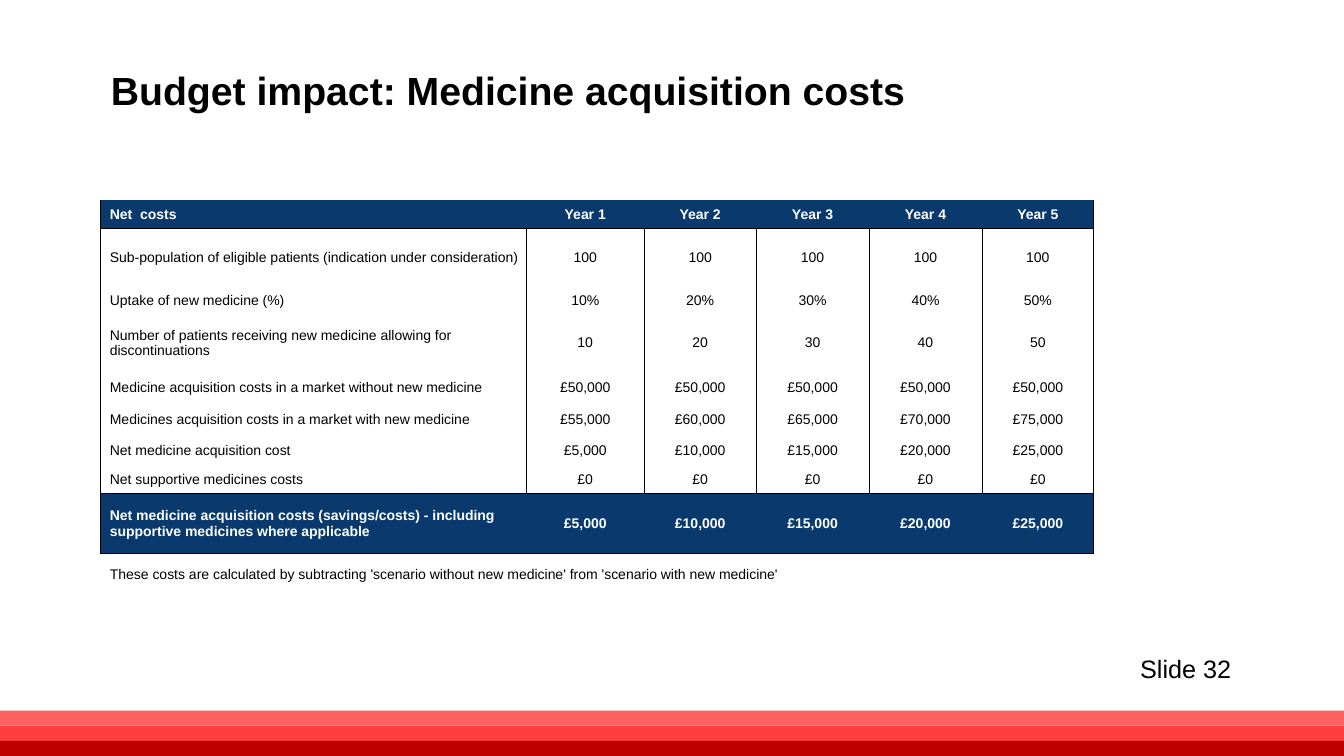
import pptx
import pptx.dml.color
import pptx.enum.text
import pptx.oxml.ns
import pptx.util
from lxml import etree
from pptx.dml.color import RGBColor
from pptx.enum.shapes import MSO_SHAPE
from pptx.enum.text import MSO_ANCHOR, MSO_AUTO_SIZE, PP_ALIGN
from pptx.util import Inches

BLACK = RGBColor(0x00, 0x00, 0x00)
WHITE = RGBColor(0xFF, 0xFF, 0xFF)
NAVY = RGBColor(0x09, 0x39, 0x6D)
BAND_COLORS = [
    RGBColor(0xFF, 0x61, 0x61),
    RGBColor(0xFF, 0x3F, 0x3F),
    RGBColor(0xC0, 0x00, 0x00),
]

COLUMN_WIDTHS = [4.22, 1.17, 1.11, 1.12, 1.12, 1.11]
ROW_HEIGHTS = [0.29, 0.56, 0.29, 0.56, 0.32, 0.32, 0.29, 0.29, 0.59, 0.29]
COSTS = [
    ["Net  costs"] + [f"Year {year}" for year in range(1, 6)],
    ["Sub-population of eligible patients (indication under consideration)"]
    + ["100"] * 5,
    ["Uptake of new medicine (%)", "10%", "20%", "30%", "40%", "50%"],
    ["Number of patients receiving new medicine allowing for discontinuations",
     "10", "20", "30", "40", "50"],
    ["Medicine acquisition costs in a market without new medicine"]
    + ["£50,000"] * 5,
    ["Medicines acquisition costs in a market with new medicine",
     "£55,000", "£60,000", "£65,000", "£70,000", "£75,000"],
    ["Net medicine acquisition cost",
     "£5,000", "£10,000", "£15,000", "£20,000", "£25,000"],
    ["Net supportive medicines costs"] + ["£0"] * 5,
    ["Net medicine acquisition costs (savings/costs) - including "
     "supportive medicines where applicable",
     "£5,000", "£10,000", "£15,000", "£20,000", "£25,000"],
]
FOOTNOTE = ("These costs are calculated by subtracting 'scenario without new "
            "medicine' from 'scenario with new medicine'")
TOTAL_ROW = len(COSTS) - 1
NOTE_ROW = len(COSTS)
LAST_COLUMN = len(COLUMN_WIDTHS) - 1


def format_text(text_frame, size, color=BLACK, bold=False, align=PP_ALIGN.LEFT):
    for paragraph in text_frame.paragraphs:
        paragraph.alignment = align
        for run in paragraph.runs:
            run.font.name = "Arial"
            run.font.size = pptx.util.Pt(size)
            run.font.bold = bold
            run.font.color.rgb = color


def add_bands(slide, left, top, width, height):
    """Stack the red bands evenly in the given box."""
    band_height = height / len(BAND_COLORS)
    for index, color in enumerate(BAND_COLORS):
        band = slide.shapes.add_shape(
            MSO_SHAPE.RECTANGLE, Inches(left), Inches(top + index * band_height),
            Inches(width), Inches(band_height))
        band.shadow.inherit = False
        band.fill.solid()
        band.fill.fore_color.rgb = color
        band.line.fill.background()


def add_title(slide, left, top, width, height):
    title = slide.shapes.title
    title.left, title.top = Inches(left), Inches(top)
    title.width, title.height = Inches(width), Inches(height)
    title.text_frame.text = "Budget impact: Medicine acquisition costs"
    title.text_frame.word_wrap = False
    title.text_frame.auto_size = MSO_AUTO_SIZE.SHAPE_TO_FIT_TEXT
    title.text_frame.vertical_anchor = MSO_ANCHOR.TOP
    format_text(title.text_frame, 28, bold=True)


def set_borders(cell, widths):
    """Draw left, right, top and bottom borders; a width of 0 hides one."""
    properties = cell._tc.get_or_add_tcPr()
    for index, (side, width) in enumerate(zip("LRTB", widths)):
        line = etree.Element(pptx.oxml.ns.qn(f"a:ln{side}"))
        if width:
            line.set("w", str(pptx.util.Pt(width)))
            fill = etree.SubElement(line, pptx.oxml.ns.qn("a:solidFill"))
            etree.SubElement(fill, pptx.oxml.ns.qn("a:srgbClr"), val=str(BLACK))
        else:
            etree.SubElement(line, pptx.oxml.ns.qn("a:noFill"))
        properties.insert(index, line)


def border_widths(row, column):
    if row == NOTE_ROW:
        return 0, 0, 1, 0
    if row in (0, TOTAL_ROW):
        return (1 if column == 0 else 0, 1 if column == LAST_COLUMN else 0,
                0.5 if row else 0, 1 if row else 0.5)
    return (1 if column == 0 else 0.5, 0.5,
            0.5 if row == 1 else 0, 0.5 if row == TOTAL_ROW - 1 else 0)


def format_cell(cell, row, column):
    highlighted = row in (0, TOTAL_ROW)
    cell.fill.solid()
    cell.fill.fore_color.rgb = NAVY if highlighted else WHITE
    cell.margin_left = Inches(0.01 if column else 0.09)
    cell.margin_right = cell.margin_top = Inches(0.01)
    cell.margin_bottom = 0
    cell.vertical_anchor = (
        MSO_ANCHOR.BOTTOM if row == NOTE_ROW else MSO_ANCHOR.MIDDLE)
    format_text(cell.text_frame, 10, WHITE if highlighted else BLACK,
                highlighted, PP_ALIGN.CENTER if column else PP_ALIGN.LEFT)
    set_borders(cell, border_widths(row, column))


def add_cost_table(slide, left, top):
    table = slide.shapes.add_table(
        len(ROW_HEIGHTS), len(COLUMN_WIDTHS), Inches(left), Inches(top),
        Inches(sum(COLUMN_WIDTHS)), Inches(sum(ROW_HEIGHTS))).table
    table.first_row = table.horz_banding = False
    for column, width in zip(table.columns, COLUMN_WIDTHS):
        column.width = Inches(width)
    for row, height in zip(table.rows, ROW_HEIGHTS):
        row.height = Inches(height)

    # Cost rows, then the footnote across the full width
    for row, texts in enumerate(COSTS):
        for column, text in enumerate(texts):
            table.cell(row, column).text_frame.text = text
    footnote = table.cell(NOTE_ROW, 0)
    footnote.merge(table.cell(NOTE_ROW, LAST_COLUMN))
    footnote.text_frame.text = FOOTNOTE

    for row in range(len(ROW_HEIGHTS)):
        for column in range(len(COLUMN_WIDTHS)):
            format_cell(table.cell(row, column), row, column)


def add_slide_label(slide, left, top, width, height):
    label = slide.shapes.add_textbox(
        Inches(left), Inches(top), Inches(width), Inches(height))
    label.text_frame.text = "Slide 32"
    label.text_frame.word_wrap = False
    label.text_frame.auto_size = MSO_AUTO_SIZE.SHAPE_TO_FIT_TEXT
    format_text(label.text_frame, 18)


def main():
    presentation = pptx.Presentation()
    presentation.slide_width = Inches(13.33)
    presentation.slide_height = Inches(7.5)
    slide = presentation.slides.add_slide(presentation.slide_layouts[5])
    add_bands(slide, 0, 7.05, 13.33, 0.45)
    add_title(slide, 1, 0.61, 8.18, 0.57)
    add_cost_table(slide, 1, 1.98)
    add_slide_label(slide, 11.21, 6.43, 1.11, 0.4)
    presentation.save("out.pptx")


if __name__ == "__main__":
    main()
